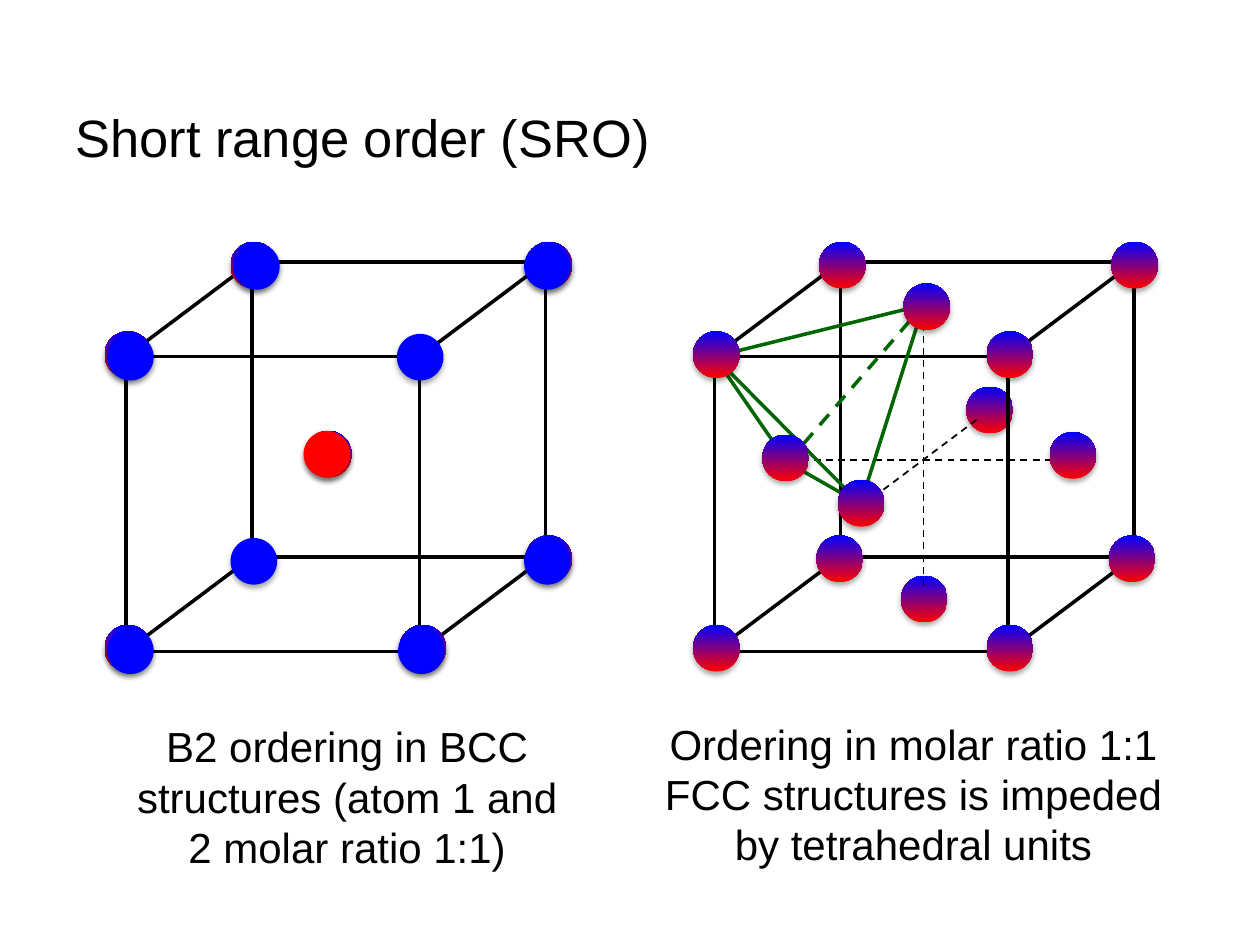
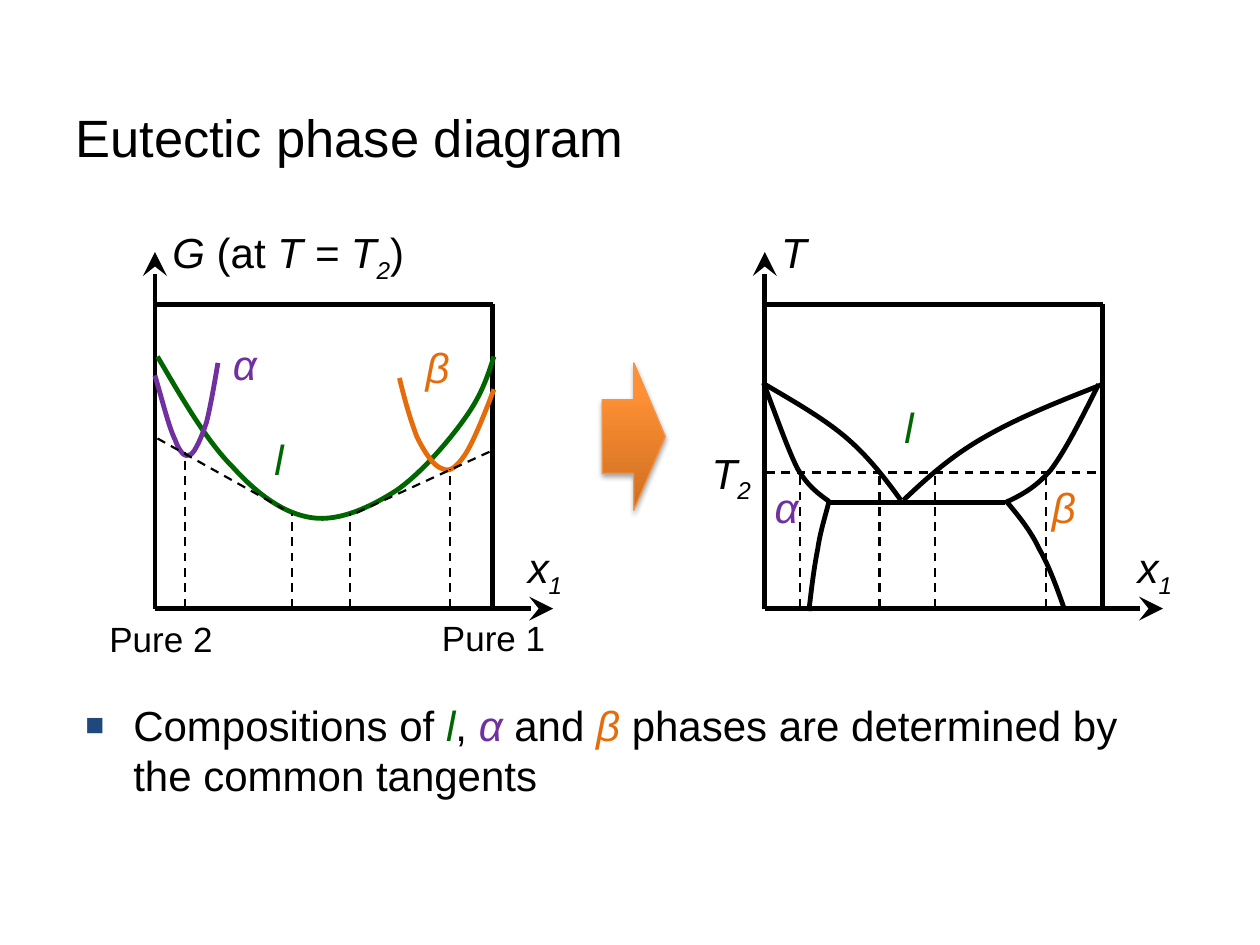
from copy import deepcopy
from typing import NamedTuple

from lxml.etree import SubElement
from pptx import Presentation
from pptx.dml.color import RGBColor
from pptx.enum.dml import MSO_LINE
from pptx.enum.shapes import MSO_CONNECTOR, MSO_SHAPE
from pptx.enum.text import MSO_ANCHOR, MSO_AUTO_SIZE, PP_ALIGN
from pptx.oxml.ns import qn
from pptx.util import Inches, Pt

COLORS = {
    "black": "000000", "blue": "0000FF", "red": "FF0000", "bullet": "1F497D",
    "liquid": "006600", "alpha": "7030A0", "beta": "E46C0A",
    "arrow_edge": "F69240", "arrow_dark": "CC6E20",
    "arrow_mid": "FF9034", "arrow_light": "FF9136",
}
FONT = "Arial"
ATOM_SIZE = 0.37
MIXED = ((0, "red"), (1, "blue"))
ARROW_FILL = ((0, "arrow_dark"), (0.8, "arrow_mid"), (1, "arrow_light"))
Point = tuple[float, float]


class Run(NamedTuple):
    text: str
    color: str = "black"
    italic: bool = False
    sub: bool = False


class Label(NamedTuple):
    left: float
    top: float
    width: float
    height: float
    runs: tuple[Run, ...]
    size: int = 24
    wrap: bool = False
    align: PP_ALIGN = PP_ALIGN.LEFT


class Line(NamedTuple):
    start: Point
    end: Point
    width: float = 2
    color: str = "black"
    dashed: bool = False
    arrow: bool = False


class Curve(NamedTuple):
    points: tuple[Point, ...]  # start, then two controls and an end per arc
    color: str = "black"


def rgb(name: str) -> RGBColor:
    return RGBColor.from_string(COLORS[name])


# Shared drawing helpers
def fill_gradient(s, stops) -> None:
    s.fill.gradient()
    s.fill.gradient_angle = 90
    gs_lst = s._element.spPr.find(".//" + qn("a:gsLst"))
    while len(gs_lst) < len(stops):
        gs_lst.append(deepcopy(gs_lst[-1]))
    for stop, (position, color) in zip(s.fill.gradient_stops, stops):
        stop.position = position
        stop.color.rgb = rgb(color)


def add_shadow(s) -> None:
    s.shadow.inherit = False
    effects = s._element.spPr.find(qn("a:effectLst"))
    shadow = SubElement(effects, qn("a:outerShdw"), blurRad=str(Pt(3.1)), dist=str(Pt(1.8)),
                        dir="5400000", rotWithShape="0")
    color = SubElement(shadow, qn("a:srgbClr"), val=COLORS["black"])
    SubElement(color, qn("a:alpha"), val="35000")


def write_runs(p, runs: tuple[Run, ...], size: int) -> None:
    for run in runs:
        r = p.add_run()
        r.text = run.text
        if run.sub:
            r.font._element.set("baseline", "-25000")
    p.font.name, p.font.size = FONT, Pt(size)
    uniform = len({(run.color, run.italic) for run in runs}) == 1
    for target, run in zip([p] if uniform else p.runs, runs):
        target.font.color.rgb = rgb(run.color)
        target.font.italic = run.italic


def add_label(slide, label: Label):
    tb = slide.shapes.add_textbox(*map(Inches, label[:4]))
    tf = tb.text_frame
    tf.word_wrap = label.wrap
    tf.auto_size = MSO_AUTO_SIZE.SHAPE_TO_FIT_TEXT
    p = tf.paragraphs[0]
    p.alignment = label.align
    write_runs(p, label.runs, label.size)
    return tb


def add_title(slide, text: str) -> None:
    tf = add_label(slide, Label(0.5, 0.5, 9, 1.17, (Run(text),), 30, True)).text_frame
    tf.auto_size = MSO_AUTO_SIZE.NONE
    tf.vertical_anchor = MSO_ANCHOR.MIDDLE


def add_line(slide, line: Line) -> None:
    s = slide.shapes.add_connector(MSO_CONNECTOR.STRAIGHT, *map(Inches, line.start + line.end))
    s.line.color.rgb = rgb(line.color)
    s.line.width = Pt(line.width)
    if line.dashed:
        s.line.dash_style = MSO_LINE.DASH
    sp_pr = s._element.spPr
    if line.arrow:
        SubElement(sp_pr.find(qn("a:ln")), qn("a:tailEnd"), type="stealth", w="lg", len="lg")
    SubElement(sp_pr, qn("a:effectLst"))


def add_lines(slide, lines) -> None:
    for line in lines:
        add_line(slide, line)


def add_curve(slide, curve: Curve) -> None:
    start, *rest = [(Inches(x), Inches(y)) for x, y in curve.points]
    builder = slide.shapes.build_freeform(*start)
    builder.add_line_segments(rest, close=False)
    s = builder.convert_to_shape()
    s.fill.background()
    s.line.color.rgb = rgb(curve.color)
    s.line.width = Pt(2.75)
    s.shadow.inherit = False
    # Turn each three straight segments into one Bézier arc
    outline = s._element.spPr.find(".//" + qn("a:path"))
    segments = outline.findall(qn("a:lnTo"))
    for i in range(0, len(segments), 3):
        arc = SubElement(outline, qn("a:cubicBezTo"))
        for segment in segments[i:i + 3]:
            arc.append(segment[0])
            outline.remove(segment)


# Crystal lattices
def add_atoms(slide, places, color: str = "") -> None:
    for left, top in places:
        s = slide.shapes.add_shape(MSO_SHAPE.OVAL, Inches(left), Inches(top),
                                   Inches(ATOM_SIZE), Inches(ATOM_SIZE))
        if color:
            s.fill.solid()
            s.fill.fore_color.rgb = rgb(color)
        else:
            fill_gradient(s, MIXED)
        s.line.fill.background()
        add_shadow(s)


def add_cube(slide, left: float) -> None:
    side, top = 2.33, 2.83
    front = [(left, top), (left + side, top), (left + side, top + 2.34), (left, top + 2.34)]
    back = [(x + 1, y - 0.75) for x, y in front]
    for i in range(4):
        j = (i + 1) % 4
        for start, end in ((back[i], back[j]), (back[i], front[i]), (front[i], front[j])):
            add_line(slide, Line(start, end))


def build_order_slide(prs) -> None:
    slide = prs.slides.add_slide(prs.slide_layouts[6])
    add_title(slide, "Short range order (SRO)")

    # FCC cell: rear atoms, face axes and cube
    add_atoms(slide, [(7.15, 4.57), (7.67, 3.07)])
    face_axes = [((6.78, 4.06), (7.78, 3.31)), ((7.33, 4.65), (7.33, 2.36)),
                 ((8.54, 3.65), (6.28, 3.65))]
    add_lines(slide, [Line(a, b, 1, dashed=True) for a, b in face_axes])
    add_cube(slide, 5.67)
    add_atoms(slide, [(5.5, 4.96), (6.5, 1.92), (8.82, 1.92), (8.8, 4.25), (6.48, 4.25),
                      (8.33, 3.43), (7.83, 4.96)])

    # BCC cell: mixed atoms lie under the ordered ones
    add_cube(slide, 1)
    add_atoms(slide, [(0.83, 2.63), (0.83, 4.96), (1.83, 1.92), (4.17, 1.92), (4.17, 4.25),
                      (2.42, 3.42), (3.17, 4.96)])
    add_atoms(slide, [(1.83, 4.27), (3.15, 2.65), (0.85, 2.65), (0.85, 4.98), (1.85, 1.93),
                      (4.16, 1.93), (4.16, 4.27), (3.16, 4.98)], "blue")
    add_atoms(slide, [(2.41, 3.42)], "red")

    # Tetrahedral unit and its atoms
    corner, top, left, front = (5.67, 2.83), (7.33, 2.42), (6.25, 3.67), (6.83, 4)
    edges = [(front, top), (left, top), (left, front), (corner, left), (corner, top),
             (corner, front)]
    add_lines(slide, [Line(a, b, color="liquid", dashed=(a, b) == (left, top)) for a, b in edges])
    add_atoms(slide, [(6.65, 3.81), (6.05, 3.45), (7.17, 2.25), (7.83, 2.63), (5.5, 2.63)])

    # Captions
    for left, top, width, text in (
        (0.92, 5.67, 3.67, "B2 ordering in BCC structures (atom 1 and 2 molar ratio 1:1)"),
        (5, 5.65, 4.5, "Ordering in molar ratio 1:1 FCC structures is impeded by "
                       "tetrahedral units"),
    ):
        add_label(slide, Label(left, top, width, 1.31, (Run(text),), wrap=True,
                               align=PP_ALIGN.CENTER))


# Phase diagrams
ALPHA, BETA = Run("α", "alpha", True), Run("β", "beta", True)
LIQUID = Run("l", "liquid", True)
FREE_ENERGY_CURVES = (
    Curve(((1.25, 2.83), (1.45, 3.17), (1.64, 3.5), (1.85, 3.71), (2.05, 3.93), (2.26, 4.08),
           (2.48, 4.11), (2.7, 4.14), (2.95, 4.02), (3.15, 3.89), (3.35, 3.75), (3.57, 3.49),
           (3.69, 3.32), (3.82, 3.14), (3.87, 2.99), (3.92, 2.83)), "liquid"),
    Curve(((1.23, 2.98), (1.29, 3.18), (1.34, 3.39), (1.39, 3.49), (1.43, 3.6), (1.47, 3.63),
           (1.51, 3.61), (1.55, 3.59), (1.6, 3.47), (1.64, 3.35), (1.67, 3.23), (1.7, 3.06),
           (1.73, 2.88)), "alpha"),
    Curve(((3.92, 3.09), (3.84, 3.3), (3.76, 3.5), (3.69, 3.61), (3.62, 3.71), (3.57, 3.75),
           (3.51, 3.72), (3.44, 3.7), (3.37, 3.59), (3.31, 3.47), (3.26, 3.34), (3.21, 3.17),
           (3.17, 3)), "beta"),
)
PHASE_BOUNDARIES = (
    Curve(((6.58, 3.98), (6.5, 3.92), (6.42, 3.87), (6.33, 3.72), (6.25, 3.56), (6.16, 3.3),
           (6.06, 3.04))),
    Curve(((6.58, 3.98), (6.55, 4.1), (6.51, 4.22), (6.49, 4.36), (6.46, 4.51), (6.44, 4.68),
           (6.42, 4.85))),
    Curve(((7.98, 3.99), (8.1, 3.93), (8.21, 3.88), (8.34, 3.73), (8.46, 3.57), (8.59, 3.31),
           (8.72, 3.05))),
    Curve(((7.98, 3.97), (8.08, 4.09), (8.18, 4.21), (8.25, 4.36), (8.33, 4.5), (8.39, 4.67),
           (8.45, 4.84))),
    Curve(((6.07, 3.05), (6.29, 3.18), (6.52, 3.31), (6.7, 3.46), (6.88, 3.61), (7.02, 3.79),
           (7.15, 3.97))),
    Curve(((8.75, 3.05), (8.42, 3.18), (8.09, 3.31), (7.83, 3.46), (7.56, 3.61), (7.36, 3.79),
           (7.17, 3.97))),
)
DIAGRAM_LABELS = (
    Label(6.1, 1.75, 0.41, 0.5, (Run("T", italic=True),)),
    Label(6.05, 3.77, 0.41, 0.5, (ALPHA,)),
    Label(5.55, 3.5, 0.53, 0.5, (Run("T", italic=True), Run("2", italic=True, sub=True))),
    Label(8.25, 3.77, 0.39, 0.5, (BETA,)),
    Label(7.08, 3.14, 0.28, 0.5, (LIQUID,)),
    Label(1.27, 1.75, 2.07, 0.5, (Run("G ", italic=True), Run("(at "), Run("T = T", italic=True),
                                  Run("2", italic=True, sub=True), Run(")"))),
    Label(3.41, 4.84, 1.03, 0.44, (Run("Pure 1"),), 20),
    Label(0.77, 4.85, 1.03, 0.44, (Run("Pure 2"),), 20),
    Label(2.08, 3.39, 0.28, 0.5, (LIQUID,)),
    Label(1.75, 2.64, 0.41, 0.5, (ALPHA,)),
    Label(3.28, 2.66, 0.39, 0.5, (BETA,)),
)


def add_axes(slide, left: float) -> None:
    origin, right, top = (left, 4.83), left + 2.68, 2.42
    add_lines(slide, [Line(origin, (left, 2), 2.75, arrow=True),
                      Line(origin, (left + 3.16, 4.83), 2.75, arrow=True),
                      Line((right, top), (left + 0.02, top), 2.75),
                      Line((right, top - 0.01), (right, 4.83), 2.75)])
    add_label(slide, Label(left + 2.86, 4.25, 0.49, 0.5,
                           (Run("x", italic=True), Run("1", italic=True, sub=True))))


def add_bullet(slide, runs: tuple[Run, ...]) -> None:
    tf = slide.shapes.add_textbox(Inches(0.58), Inches(5.5), Inches(8.67),
                                  Inches(1.43)).text_frame
    tf.word_wrap = True
    p = tf.paragraphs[0]
    p_pr = p._p.get_or_add_pPr()
    p_pr.set("marL", str(Inches(0.38)))
    p_pr.set("indent", str(-Inches(0.38)))
    SubElement(SubElement(p_pr, qn("a:buClr")), qn("a:srgbClr"), val=COLORS["bullet"])
    SubElement(p_pr, qn("a:buSzPct"), val="75000")
    SubElement(p_pr, qn("a:buFont"), typeface=FONT)
    SubElement(p_pr, qn("a:buChar"), char="■")
    write_runs(p, runs, 24)


def build_eutectic_slide(prs) -> None:
    slide = prs.slides.add_slide(prs.slide_layouts[6])
    add_title(slide, "Eutectic phase diagram")
    for left in (6.07, 1.23):
        add_axes(slide, left)

    # Eutectic line, curves and labels
    add_line(slide, Line((6.58, 3.99), (7.98, 3.99), 2.75))
    for curve in PHASE_BOUNDARIES + FREE_ENERGY_CURVES:
        add_curve(slide, curve)
    for label in DIAGRAM_LABELS:
        add_label(slide, label)

    # Isotherm, common tangents and composition lines
    guides = [((6.08, 3.75), (8.75, 3.75)), ((1.25, 3.48), (2.25, 4.04)),
              ((2.83, 4.07), (3.92, 3.57))]
    compositions = ((1.47, 3.59), (3.57, 3.72), (2.32, 4.07), (2.78, 4.07),
                    (6.35, 3.77), (7.42, 3.75), (6.98, 3.77), (8.3, 3.75))
    guides += [((x, 4.82), (x, y)) for x, y in compositions]
    add_lines(slide, [Line(a, b, 1.25, dashed=True) for a, b in guides])

    # Conclusion and arrow between the diagrams
    add_bullet(slide, (Run("Compositions of "), LIQUID, Run(", "), ALPHA, Run(" and "), BETA,
                       Run(" phases are determined by the common tangents")))
    s = slide.shapes.add_shape(MSO_SHAPE.RIGHT_ARROW, Inches(4.78), Inches(2.88),
                               Inches(0.5), Inches(1.17))
    fill_gradient(s, ARROW_FILL)
    s.line.color.rgb = rgb("arrow_edge")
    s.line.width = Pt(0.75)
    add_shadow(s)


def main() -> None:
    prs = Presentation()
    prs.slide_width, prs.slide_height = Inches(10), Inches(7.5)
    build_order_slide(prs)
    build_eutectic_slide(prs)
    prs.save("out.pptx")


if __name__ == "__main__":
    main()
